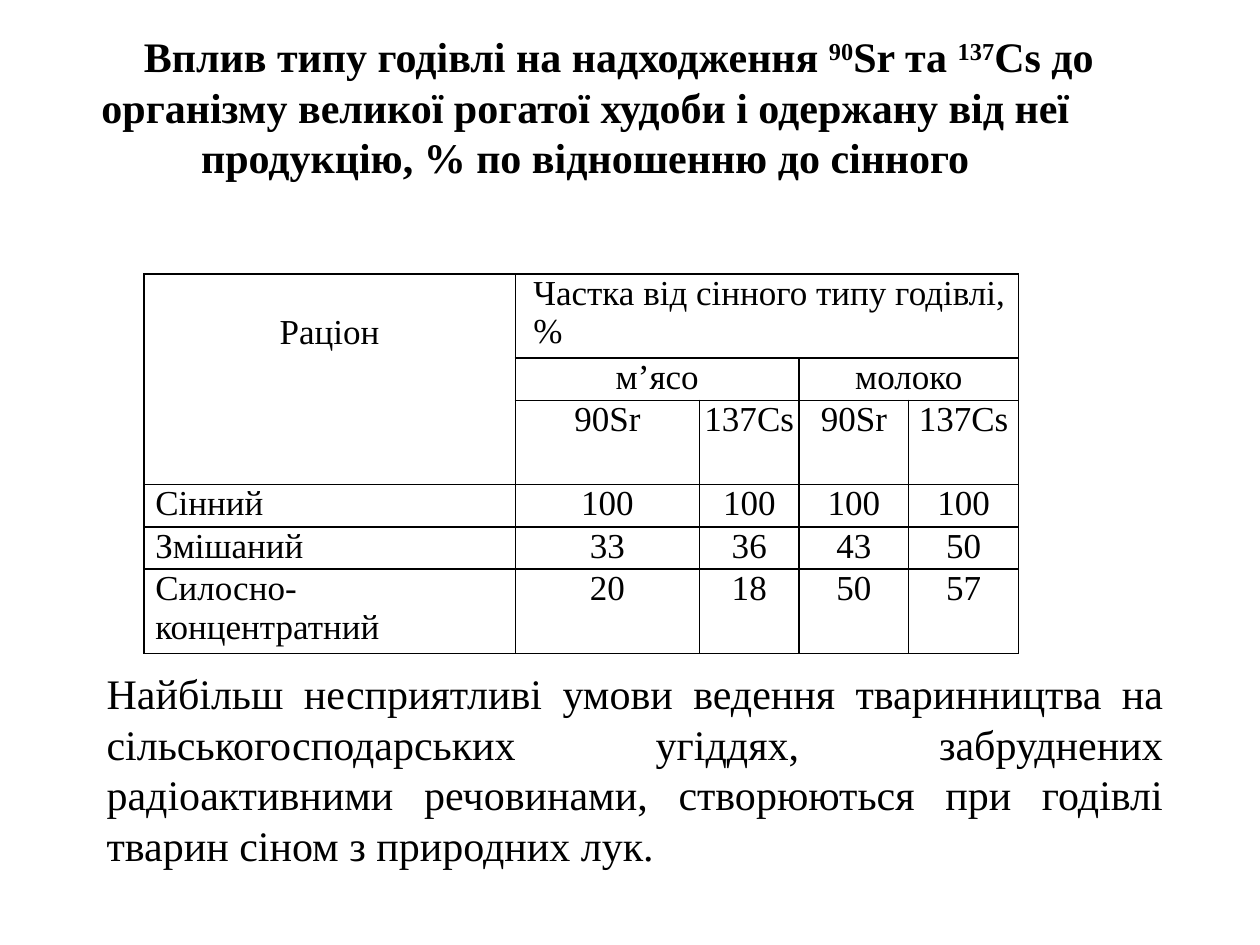
from lxml import etree
from pptx import Presentation
from pptx.dml.color import RGBColor
from pptx.enum.text import MSO_ANCHOR, PP_ALIGN
from pptx.oxml.ns import qn
from pptx.util import Cm, Pt

LEFT, CENTER, JUSTIFY = PP_ALIGN.LEFT, PP_ALIGN.CENTER, PP_ALIGN.JUSTIFY
TOP, MIDDLE = MSO_ANCHOR.TOP, MSO_ANCHOR.MIDDLE
COLORS = {"text": "000000", "border": "000000", "cell": "FFFFFF"}
FONT = "Times New Roman"

TITLE = [
    ("Вплив типу годівлі на надходження ", False),
    ("90", True),
    ("Sr та ", False),
    ("137", True),
    ("Сs до організму великої рогатої худоби і одержану від неї "
     "продукцію, % по відношенню до сінного", False),
]
CONCLUSION = (
    "Найбільш несприятливі умови ведення тваринництва на "
    "сільськогосподарських угіддях, забруднених радіоактивними речовинами, "
    "створюються при годівлі тварин сіном з природних лук."
)

ROWS = [
    ["Раціон", "Частка від сінного типу годівлі, %", "", "", ""],
    ["", "м’ясо", "", "молоко", ""],
    ["", "90Sr", "137Сs", "90Sr", "137Сs"],
    ["Сінний", "100", "100", "100", "100"],
    ["Змішаний", "33", "36", "43", "50"],
    ["Силосно-концентратний", "20", "18", "50", "57"],
]
MERGES = [((0, 0), (2, 0)), ((0, 1), (0, 4)), ((1, 1), (1, 2)), ((1, 3), (1, 4))]
COLUMN_WIDTHS = [7.49, 3.71, 2.01, 2.21, 2.21]
LINE_HEIGHT = 0.85
ROW_LINES = [2, 1, 2, 1, 1, 2]


def apply(target, values):
    for name, value in values.items():
        setattr(target, name, value)


def add_run(paragraph, text, size, bold=False, raised=False):
    run = paragraph.add_run()
    run.text = text
    apply(run.font, {"name": FONT, "size": Pt(size), "bold": bold})
    run.font.color.rgb = RGBColor.from_string(COLORS["text"])
    if raised:
        run.font._element.set("baseline", "30000")


def add_text(slide, box, runs, align, anchor=TOP, bold=False, first_indent=0):
    frame = slide.shapes.add_textbox(*map(Cm, box)).text_frame
    apply(frame, {"word_wrap": True, "vertical_anchor": anchor})
    paragraph = frame.paragraphs[0]
    paragraph.alignment = align
    if first_indent:
        paragraph._p.get_or_add_pPr().set("indent", str(Cm(first_indent)))
    for text, raised in runs:
        add_run(paragraph, text, 24, bold, raised)


def add_borders(cell):
    properties = cell._tc.get_or_add_tcPr()
    for position, side in enumerate(("a:lnL", "a:lnR", "a:lnT", "a:lnB")):
        line = etree.Element(qn(side), w=str(Pt(1)))
        fill = etree.SubElement(line, qn("a:solidFill"))
        etree.SubElement(fill, qn("a:srgbClr"), val=COLORS["border"])
        properties.insert(position, line)


def fill_cell(cell, text, align, left=0, top=0):
    apply(cell, {"margin_left": Cm(left), "margin_top": Cm(top),
                 "margin_right": 0, "margin_bottom": 0})
    cell.fill.solid()
    cell.fill.fore_color.rgb = RGBColor.from_string(COLORS["cell"])
    add_borders(cell)
    paragraph = cell.text_frame.paragraphs[0]
    paragraph.alignment = align
    if text:
        add_run(paragraph, text, 20)
    else:
        paragraph.font.size = Pt(20)


def add_ration_table(slide):
    heights = [LINE_HEIGHT * lines for lines in ROW_LINES]
    table = slide.shapes.add_table(
        len(ROWS), len(COLUMN_WIDTHS), Cm(2.9), Cm(5.52),
        Cm(sum(COLUMN_WIDTHS)), Cm(sum(heights))).table
    apply(table, {"first_row": False, "horz_banding": False})
    for column, width in zip(table.columns, COLUMN_WIDTHS):
        column.width = Cm(width)
    for row, height in zip(table.rows, heights):
        row.height = Cm(height)

    # Cells that differ from the centred default
    layouts = {(0, 0): {"align": CENTER, "top": 0.8},
               (0, 1): {"align": LEFT, "left": 0.36}}
    for r in range(3, len(ROWS)):
        layouts[r, 0] = {"align": LEFT, "left": 0.23}

    for r, row in enumerate(ROWS):
        for c, text in enumerate(row):
            fill_cell(table.cell(r, c), text, **layouts.get((r, c), {"align": CENTER}))
    for first, last in MERGES:
        table.cell(*first).merge(table.cell(*last))


def main():
    presentation = Presentation()
    apply(presentation, {"slide_width": Cm(25.4), "slide_height": Cm(19.05)})
    slide = presentation.slides.add_slide(presentation.slide_layouts[6])

    # Feeding types and isotope shares
    add_ration_table(slide)
    # Heading
    add_text(slide, (0.5, 0.48, 22.6, 3.33), TITLE, CENTER, MIDDLE,
             bold=True, first_indent=1.35)
    # Conclusion
    add_text(slide, (1.9, 13.34, 21.8, 4.37), [(CONCLUSION, False)], JUSTIFY)

    presentation.save("out.pptx")


if __name__ == "__main__":
    main()
